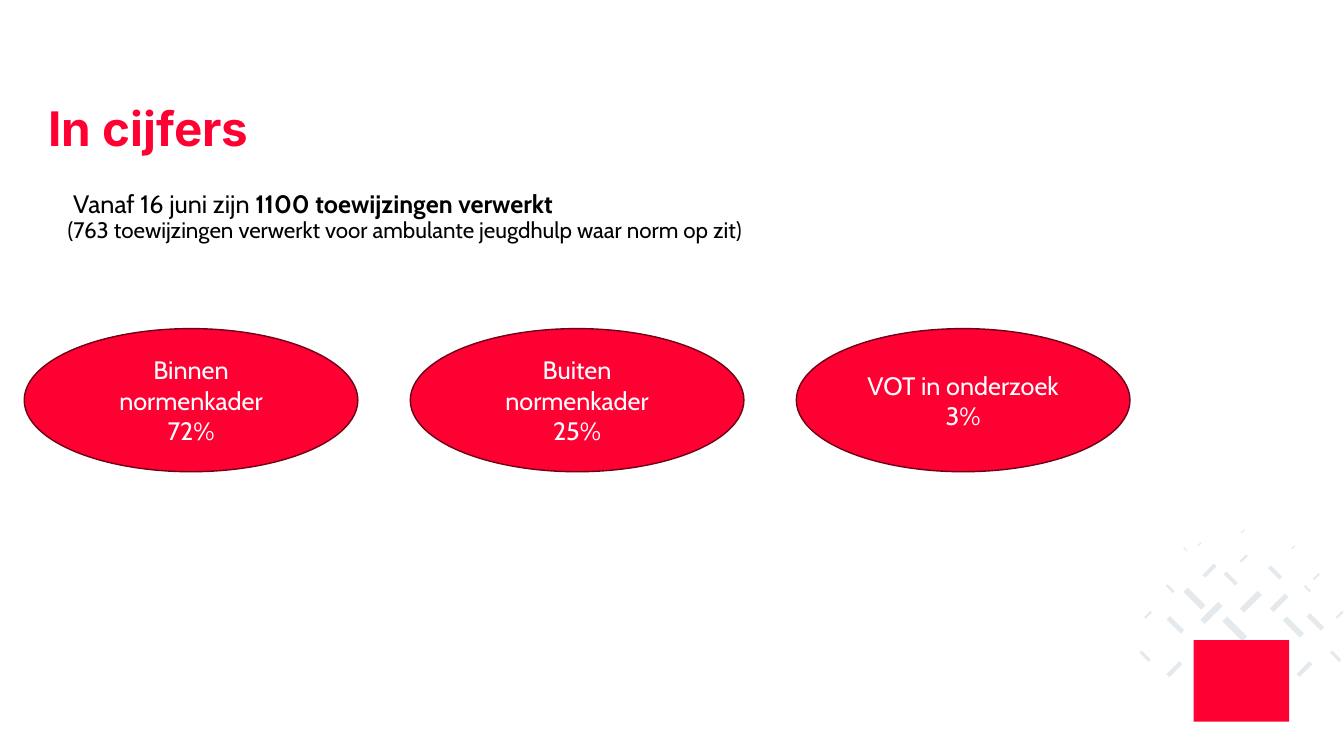
from pptx import Presentation
from pptx.dml.color import RGBColor
from pptx.enum.shapes import MSO_SHAPE
from pptx.enum.text import MSO_ANCHOR, MSO_AUTO_SIZE, PP_ALIGN
from pptx.util import Inches, Pt
from lxml.etree import SubElement
from pptx.oxml.ns import qn

RED = RGBColor(0xFF, 0x00, 0x33)
DARK_RED = RGBColor(0x70, 0x00, 0x16)
PALE_GREY = RGBColor(0xE4, 0xE9, 0xEE)
WHITE = RGBColor(0xFF, 0xFF, 0xFF)
BLACK = RGBColor(0x00, 0x00, 0x00)

CELL = Inches(0.1)
COLUMNS, ROWS = 133.33, 75
OVAL_LEFT, OVAL_TOP, OVAL_PITCH = 2.4, 32.6, 38.3
OVAL_WIDTH, OVAL_HEIGHT = 33.1, 14.2
DASH_RATIO = 0.24

RESULTS = [
    ("Binnen normenkader", "72%"),
    ("Buiten normenkader", "25%"),
    ("VOT in onderzoek", "3%"),
]
RISING_DASHES = [
    (116.5, 66.4, 1.8), (129.4, 66.4, 1.8), (124.1, 59.7, 2.5),
    (113.9, 61, 0.9), (123.4, 55.4, 0.9), (120.2, 60.8, 2.5),
    (126.9, 59.8, 2.1), (132.9, 61, 0.9), (120, 56.6, 1.6),
    (130.6, 57.2, 0.8), (128.3, 54.3, 0.5), (123.3, 52.7, 0.5),
    (119, 54, 0.5),
]
FALLING_DASHES = [
    (113.6, 65.1, 1.3), (132.5, 65.1, 1.3), (122.5, 62.4, 2.8),
    (116.6, 62, 2), (118.5, 59.4, 2.5), (130.5, 61.7, 2),
    (128.3, 62.2, 2.4), (116.1, 58.4, 1), (122.1, 57.4, 1.6),
    (126.5, 56.8, 1.6), (129.7, 58.4, 0.8), (117.6, 54.5, 0.5),
]


def cells(*counts):
    """Turn counts of grid cells into lengths."""
    return [round(count * CELL) for count in counts]


def style_span(span, size, color, font="Cabin", bold=False):
    """Format one run of text."""
    span.font.name = font
    span.font.size = Pt(size)
    span.font.bold = bold
    span.font.color.rgb = color


def place_holder(holder, left, top, width, height):
    """Move a placeholder on the grid and clear its margins."""
    holder.left, holder.top, holder.width, holder.height = cells(left, top, width, height)
    frame = holder.text_frame
    frame.margin_left = frame.margin_right = frame.margin_top = frame.margin_bottom = 0
    frame.vertical_anchor = MSO_ANCHOR.TOP
    frame.auto_size = MSO_AUTO_SIZE.NONE
    frame.word_wrap = True
    return frame


def plain_para(para, spacing, indent=0):
    """Left-align a paragraph without a bullet."""
    para.alignment = PP_ALIGN.LEFT
    para.line_spacing = spacing
    para.space_before = Pt(0)
    properties = para._p.get_or_add_pPr()
    properties.set("marL", "0")
    properties.set("indent", str(Pt(indent)))
    SubElement(properties, qn("a:buNone"))


def add_solid(page, kind, left, top, width, height, color):
    """Add a filled shape without an outline or shadow."""
    shape = page.shapes.add_shape(kind, *cells(left, top, width, height))
    shape.shadow.inherit = False
    shape.fill.solid()
    shape.fill.fore_color.rgb = color
    shape.line.fill.background()
    return shape


def add_dashes(page, dashes, angle):
    """Scatter slanted dashes around their centres."""
    for center, middle, length in dashes:
        height = length * DASH_RATIO
        dash = add_solid(page, MSO_SHAPE.RECTANGLE, center - length / 2,
                         middle - height / 2, length, height, PALE_GREY)
        dash.rotation = angle


def add_result(page, position, label, share):
    """Add one oval with a label and its share."""
    oval = add_solid(page, MSO_SHAPE.OVAL, OVAL_LEFT + position * OVAL_PITCH,
                     OVAL_TOP, OVAL_WIDTH, OVAL_HEIGHT, RED)
    oval.line.color.rgb = DARK_RED
    oval.line.width = Pt(1)
    frame = oval.text_frame
    frame.word_wrap = True
    frame.vertical_anchor = MSO_ANCHOR.MIDDLE
    frame.text = f"{label}\n{share}"
    for para in frame.paragraphs:
        para.alignment = PP_ALIGN.CENTER
        style_span(para.runs[0], 18, WHITE)


def add_title(page):
    """Fill the title placeholder."""
    frame = place_holder(page.shapes.title, 4.8, 10.7, 123.6, 6.3)
    frame.text = "In cijfers"
    plain_para(frame.paragraphs[0], 0.85)
    style_span(frame.paragraphs[0].runs[0], 34, RED, "Inter", True)


def add_summary(page):
    """Fill the body placeholder with the two summary lines."""
    frame = place_holder(page.placeholders[1], 6.7, 19, 103.9, 49.1)
    frame.text = "Vanaf 16 juni zijn \n(763 toewijzingen verwerkt voor ambulante jeugdhulp waar norm op zit)"
    lead, detail = frame.paragraphs
    plain_para(lead, 0.9, indent=4)
    plain_para(detail, 0.9)
    style_span(lead.runs[0], 18, BLACK)
    total = lead.add_run()
    total.text = "1100 toewijzingen verwerkt"
    style_span(total, 18, BLACK, bold=True)
    style_span(detail.runs[0], 16, BLACK)


def main():
    """Build and save the deck."""
    deck = Presentation()
    deck.slide_width, deck.slide_height = cells(COLUMNS, ROWS)
    page = deck.slides.add_slide(deck.slide_layouts[1])
    add_dashes(page, RISING_DASHES, 315)
    add_dashes(page, FALLING_DASHES, 45)
    add_solid(page, MSO_SHAPE.RECTANGLE, 118.4, 63.5, 9.5, 8.1, RED)
    add_title(page)
    add_summary(page)
    for position, (label, share) in enumerate(RESULTS):
        add_result(page, position, label, share)
    deck.save("out.pptx")


if __name__ == "__main__":
    main()
